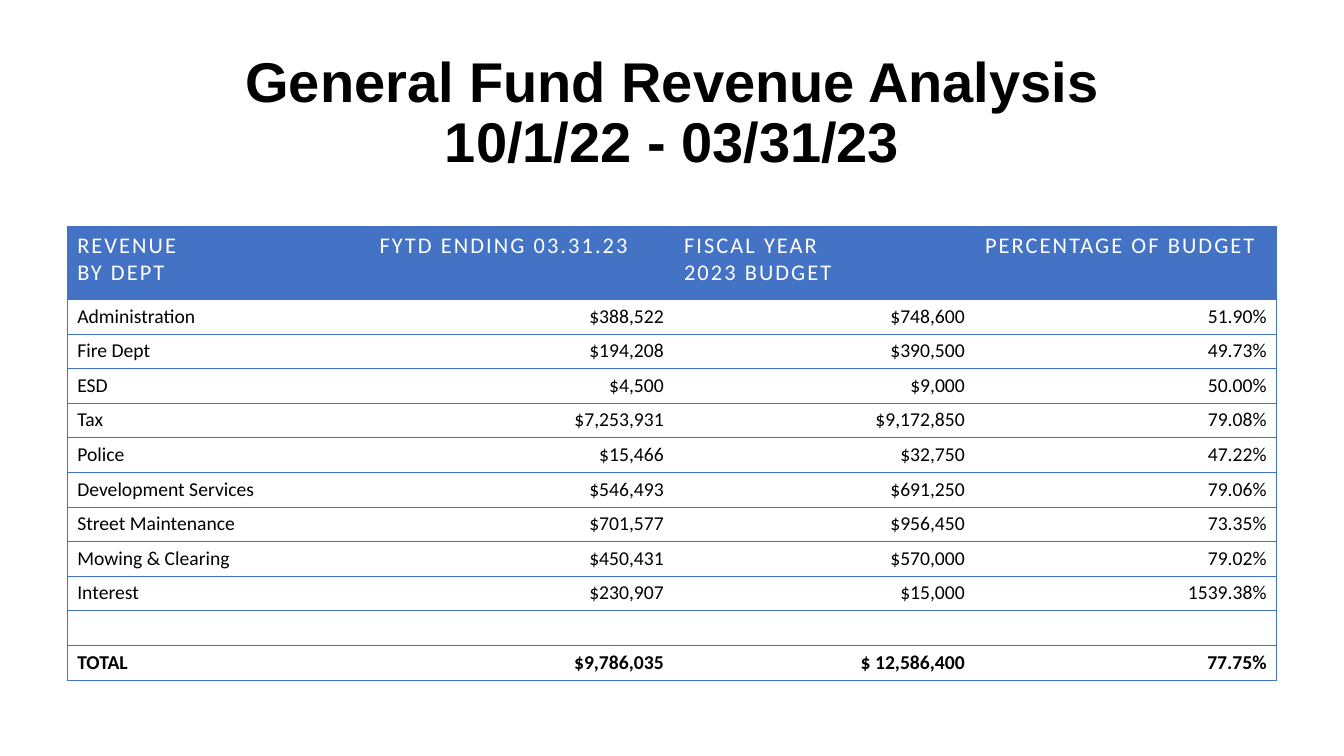
import pptx
import pptx.dml.color
import pptx.enum.text
import pptx.oxml
import pptx.oxml.ns
import pptx.util
from lxml import etree

COLORS = {"accent": "4472C4", "heading": "FFFFFF", "ink": "000000"}
ALIGN = pptx.enum.text.PP_ALIGN
ANCHOR = pptx.enum.text.MSO_ANCHOR
HEADINGS = ["REVENUE\nBY DEPT", "FYTD ENDING 03.31.23", "FISCAL YEAR\n2023 BUDGET", "PERCENTAGE OF BUDGET"]
REVENUE = [
    ["Administration", "$388,522", "$748,600", "51.90%"],
    ["Fire Dept", "$194,208", "$390,500", "49.73%"],
    ["ESD", "$4,500", "$9,000", "50.00%"],
    ["Tax", "$7,253,931", "$9,172,850", "79.08%"],
    ["Police", "$15,466", "$32,750", "47.22%"],
    ["Development Services", "$546,493", "$691,250", "79.06%"],
    ["Street Maintenance", "$701,577", "$956,450", "73.35%"],
    ["Mowing & Clearing", "$450,431", "$570,000", "79.02%"],
    ["Interest", "$230,907", "$15,000", "1539.38%"],
    ["", "", "", ""],
    ["TOTAL", "$9,786,035", "$ 12,586,400", "77.75%"],
]


class RevenuePage:
    """Draws on one blank page with a grid of 20 columns by 20 rows."""

    formats = {
        "title": {"name": "Arial", "size": pptx.util.Pt(40), "bold": True},
        "heading": {"name": "Calibri", "size": pptx.util.Pt(16), "bold": False},
        "body": {"name": "Calibri", "size": pptx.util.Pt(14), "bold": False},
        "total": {"name": "Calibri", "size": pptx.util.Pt(14), "bold": True},
    }

    def __init__(self, deck):
        self.page = deck.slides.add_slide(deck.slide_layouts[6])
        self.column = deck.slide_width / 20
        self.row = deck.slide_height / 20

    def area(self, left, top, width, height):
        return [int(left * self.column), int(top * self.row), int(width * self.column), int(height * self.row)]

    def style(self, span, kind, color):
        for name, value in self.formats[kind].items():
            setattr(span.font, name, value)
        span.font.color.rgb = pptx.dml.color.RGBColor.from_string(COLORS[color])

    def title(self, lines, *place):
        box = self.page.shapes.add_textbox(*self.area(*place))
        frame = box.text_frame
        for name, value in {"word_wrap": True, "vertical_anchor": ANCHOR.MIDDLE}.items():
            setattr(frame, name, value)
        para = frame.paragraphs[0]
        for name, value in {"alignment": ALIGN.CENTER, "line_spacing": 0.9}.items():
            setattr(para, name, value)
        for index, line in enumerate(lines):
            if index:
                para.add_line_break()
            span = para.add_run()
            span.text = line
            self.style(span, "title", "ink")

    def border(self, cell, visible):
        properties = cell._tc.get_or_add_tcPr()
        for side in ("lnL", "lnR", "lnT", "lnB"):
            line = etree.SubElement(properties, pptx.oxml.ns.qn(f"a:{side}"), w=str(pptx.util.Pt(0.5)))
            if side in visible:
                fill = etree.SubElement(line, pptx.oxml.ns.qn("a:solidFill"))
                etree.SubElement(fill, pptx.oxml.ns.qn("a:srgbClr"), val=COLORS["accent"])
            else:
                etree.SubElement(line, pptx.oxml.ns.qn("a:noFill"))

    def cell(self, cell, text, kind, align):
        heading = kind == "heading"
        for index, line in enumerate(text.split("\n")):
            frame = cell.text_frame
            para = frame.add_paragraph() if index else frame.paragraphs[0]
            para.alignment = align
            if not line:
                size = self.formats[kind]["size"].pt
                etree.SubElement(para._p, pptx.oxml.ns.qn("a:endParaRPr"), sz=str(int(size * 100)))
                continue
            span = para.add_run()
            span.text = line
            self.style(span, kind, "heading" if heading else "ink")
            if heading:
                span.font._element.set("spc", "150")
        if heading:
            cell.fill.solid()
            cell.fill.fore_color.rgb = pptx.dml.color.RGBColor.from_string(COLORS["accent"])
        else:
            cell.fill.background()

    def table(self, rows, widths, heading_height, *place):
        table = self.page.shapes.add_table(len(rows), len(widths), *self.area(*place)).table
        for name in ("first_row", "horz_banding"):
            setattr(table, name, False)
        for column, width in zip(table.columns, widths):
            column.width = int(width * self.column)
        body_height = (place[3] - heading_height) / (len(rows) - 1)
        for down, values in enumerate(rows):
            table.rows[down].height = int((body_height if down else heading_height) * self.row)
            kind = "total" if values[0] == "TOTAL" else "body" if down else "heading"
            for across, text in enumerate(values):
                sides = {"lnT", "lnB"}
                if across == 0:
                    sides.add("lnL")
                if across == len(widths) - 1:
                    sides.add("lnR")
                target = table.cell(down, across)
                self.border(target, sides)
                self.cell(target, text, kind, ALIGN.RIGHT if down and across else ALIGN.LEFT)


def main():
    deck = pptx.Presentation()
    deck.slide_width = pptx.util.Inches(13.33)
    deck.slide_height = pptx.util.Inches(7.5)
    page = RevenuePage(deck)
    page.title(["General Fund Revenue Analysis", "10/1/22 - 03/31/23"], 1, 0.9, 18, 4.25)
    page.table([HEADINGS] + REVENUE, [4.5, 4.53, 4.48, 4.49], 1.92, 1, 6, 18, 12)
    deck.save("out.pptx")


if __name__ == "__main__":
    main()
